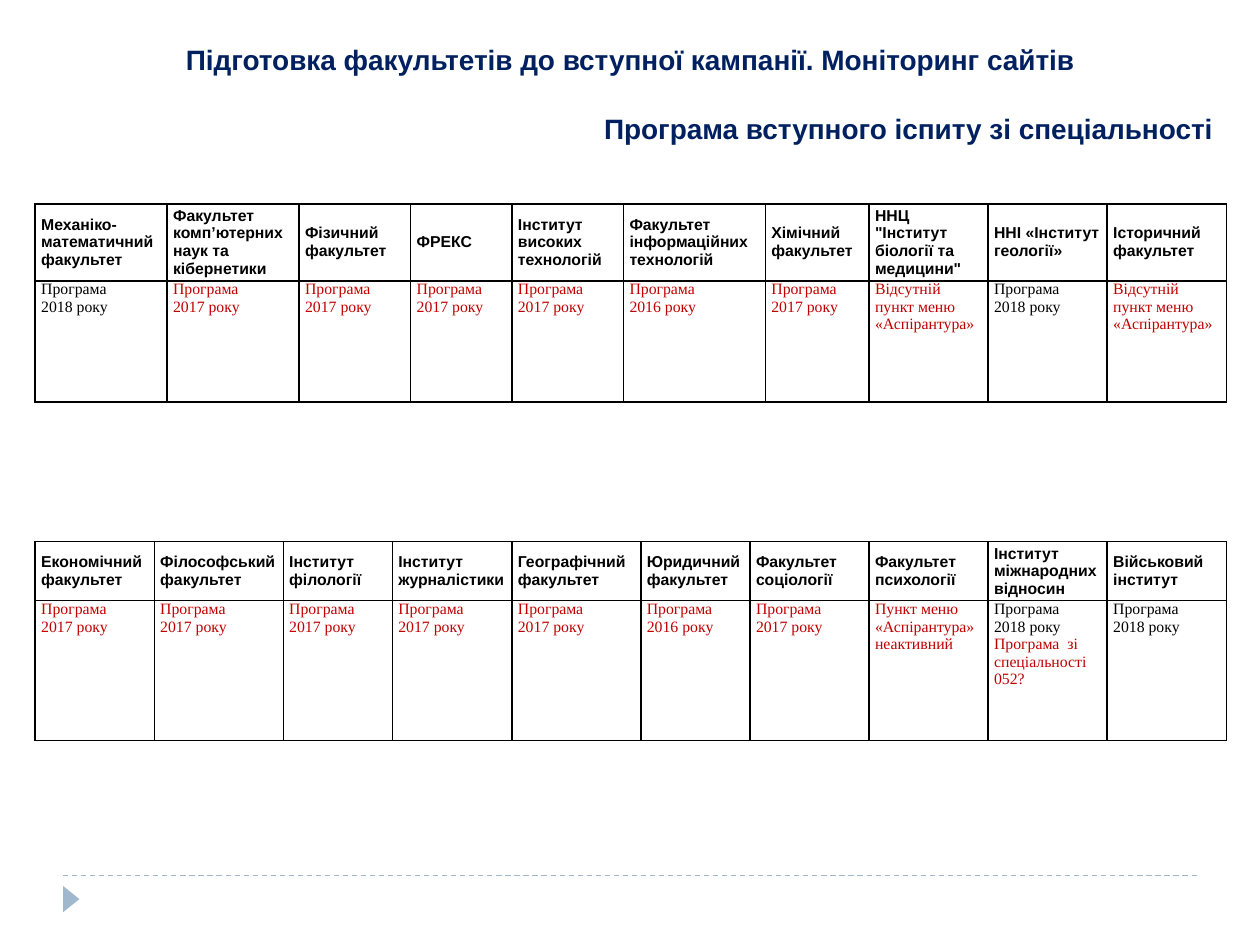
"""Build the slide on faculty admission readiness with two site monitoring tables."""
from lxml import etree
from pptx import Presentation
from pptx.dml.color import RGBColor
from pptx.enum.dml import MSO_LINE
from pptx.enum.shapes import MSO_CONNECTOR, MSO_SHAPE
from pptx.enum.text import MSO_ANCHOR, MSO_AUTO_SIZE, PP_ALIGN
from pptx.oxml.ns import qn
from pptx.util import Cm, Pt

NAVY = RGBColor(0x00, 0x20, 0x60)
BLACK = RGBColor(0x00, 0x00, 0x00)
RED = RGBColor(0xC0, 0x00, 0x00)
STEEL = RGBColor(0x9F, 0xB8, 0xCD)
DASH = MSO_LINE.DASH
STRAIGHT = MSO_CONNECTOR.STRAIGHT
TRIANGLE = MSO_SHAPE.ISOSCELES_TRIANGLE
TOP, MIDDLE = MSO_ANCHOR.TOP, MSO_ANCHOR.MIDDLE
CENTER, RIGHT = PP_ALIGN.CENTER, PP_ALIGN.RIGHT
GROW = MSO_AUTO_SIZE.SHAPE_TO_FIT_TEXT

LEFT, WIDTH = 0.71, 24
TITLE = [
    ("Підготовка факультетів до вступної кампанії. Моніторинг сайтів", CENTER, 0),
    ("Програма вступного іспиту зі спеціальності", RIGHT, 20),
]
P2016 = [("Програма", RED), ("2016 року", RED)]
P2017 = [("Програма", RED), ("2017 року", RED)]
P2018 = [("Програма", BLACK), ("2018 року", BLACK)]
MISSING = [("Відсутній пункт меню «Аспірантура»", RED)]
INACTIVE = [("Пункт меню «Аспірантура» неактивний", RED)]
QUESTION = [("Програма  зі спеціальності 052?", RED)]

TABLES = [
    {"top": 4.11, "rows": (1.55, 2.44), "columns": [
        (2.66, "Механіко-математичний факультет", P2018),
        (2.66, "Факультет комп’ютерних наук та кібернетики", P2017),
        (2.25, "Фізичний факультет", P2017),
        (2.04, "ФРЕКС", P2017),
        (2.25, "Інститут високих технологій", P2017),
        (2.86, "Факультет інформаційних технологій", P2016),
        (2.09, "Хімічний факультет", P2017),
        (2.4, "ННЦ \"Інститут біології та медицини\"", MISSING),
        (2.4, "ННІ «Інститут геології»", P2018),
        (2.4, "Історичний факультет", MISSING),
    ]},
    {"top": 10.92, "rows": (1.19, 2.82), "columns": [
        (2.4, "Економічний факультет", P2017),
        (2.6, "Філософський факультет", P2017),
        (2.2, "Інститут\nфілології", P2017),
        (2.41, "Інститут журналістики", P2017),
        (2.6, "Географічний факультет", P2017),
        (2.2, "Юридичний факультет", P2016),
        (2.4, "Факультет соціології", P2017),
        (2.4, "Факультет психології", INACTIVE),
        (2.4, "Інститут міжнародних відносин", P2018 + QUESTION),
        (2.4, "Військовий інститут", P2018),
    ]},
]


def style_font(font, size, name, color, bold):
    font.size, font.name, font.bold = Pt(size), name, bold
    font.color.rgb = color


def add_borders(cell):
    tcPr = cell._tc.get_or_add_tcPr()
    for side in ("a:lnL", "a:lnR", "a:lnT", "a:lnB"):
        ln = etree.SubElement(tcPr, qn(side), w=str(Pt(1)))
        fill = etree.SubElement(ln, qn("a:solidFill"))
        etree.SubElement(fill, qn("a:srgbClr"), val=str(BLACK))


def fill_cell(cell, lines, name, bold, anchor):
    cell.margin_left = cell.margin_right = Cm(0.12)
    cell.margin_top = cell.margin_bottom = 0
    cell.vertical_anchor = anchor
    add_borders(cell)
    cell.fill.background()
    tf = cell.text_frame
    tf.text = "\n".join(text for text, _ in lines)
    for p, (_, color) in zip(tf.paragraphs, lines):
        style_font(p.runs[0].font, 9, name, color, bold)


def add_faculty_table(s, top, rows, columns):
    table = s.shapes.add_table(len(rows), len(columns), Cm(LEFT), Cm(top),
                               Cm(WIDTH), Cm(sum(rows))).table
    table.first_row = table.horz_banding = False
    for row, height in zip(table.rows, rows):
        row.height = Cm(height)
    for i, (width, faculty, status) in enumerate(columns):
        table.columns[i].width = Cm(width)
        heading = [(line, BLACK) for line in faculty.split("\n")]
        fill_cell(table.cell(0, i), heading, "Arial", True, MIDDLE)
        fill_cell(table.cell(1, i), status, "Times New Roman", False, TOP)


def add_title(s):
    sp = s.shapes.title
    sp.left, sp.top, sp.width, sp.height = Cm(LEFT), Cm(0.74), Cm(WIDTH), Cm(2.31)
    tf = sp.text_frame
    tf.text = "\n".join(text for text, _, _ in TITLE)
    tf.word_wrap, tf.auto_size, tf.vertical_anchor = True, GROW, TOP
    for p, (_, align, gap) in zip(tf.paragraphs, TITLE):
        p.alignment, p.space_before = align, Pt(gap)
        style_font(p.runs[0].font, 16, "Arial", NAVY, True)


def add_footer_marks(s):
    line = s.shapes.add_connector(STRAIGHT, Cm(1.27), Cm(17.65), Cm(24.13), Cm(17.65))
    line.line.color.rgb, line.line.width, line.line.dash_style = STEEL, Pt(0.75), DASH
    etree.SubElement(line._element.spPr, qn("a:effectLst"))
    sp = s.shapes.add_shape(TRIANGLE, Cm(1.17), Cm(17.96), Cm(0.53), Cm(0.33))
    sp.rotation = 90
    sp.shadow.inherit = False
    sp.fill.solid()
    sp.fill.fore_color.rgb = STEEL
    sp.line.fill.background()


def main():
    prs = Presentation()
    prs.slide_width, prs.slide_height = Cm(25.4), Cm(19.05)
    s = prs.slides.add_slide(prs.slide_layouts[5])
    add_footer_marks(s)
    add_title(s)
    for spec in TABLES:
        add_faculty_table(s, spec["top"], spec["rows"], spec["columns"])
    prs.save("out.pptx")


if __name__ == "__main__":
    main()
